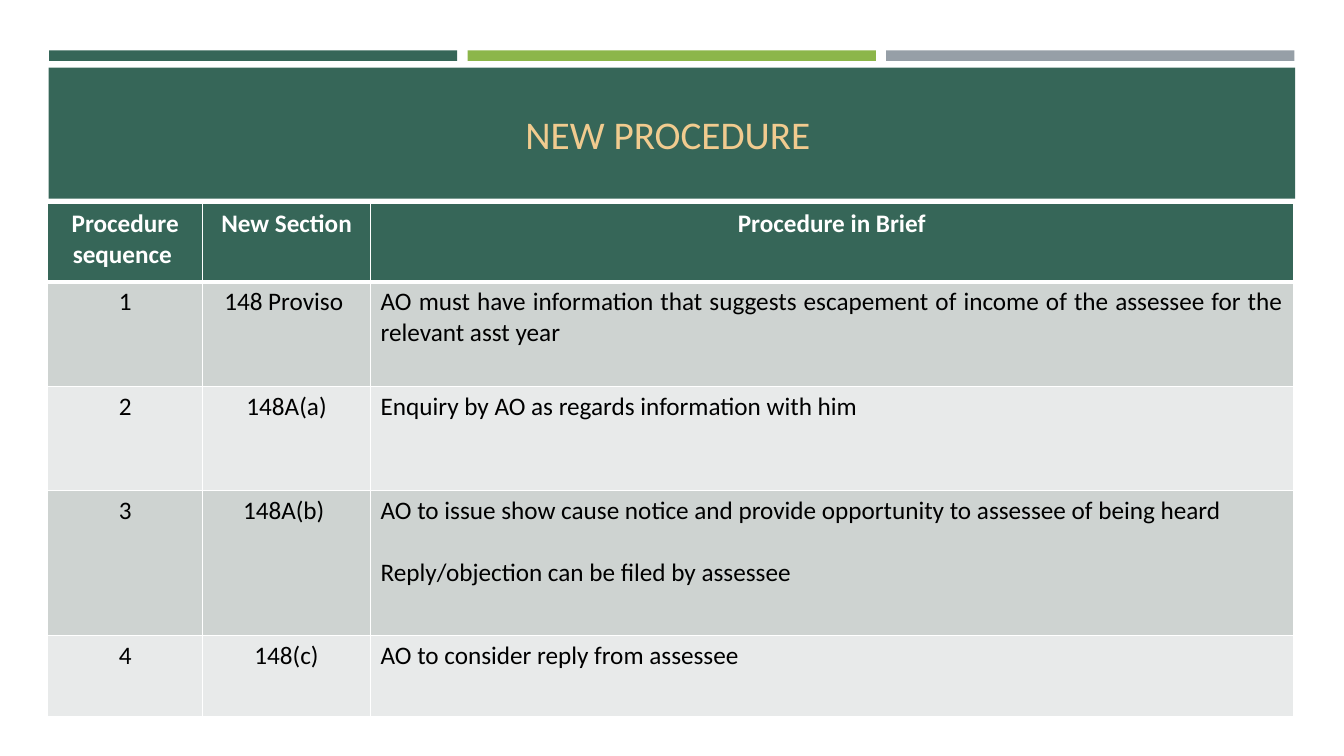
import pptx
import pptx.util
import pptx.dml.color
import pptx.enum.shapes
import pptx.enum.text
import pptx.oxml

Pt = pptx.util.Pt
RGBColor = pptx.dml.color.RGBColor
ALIGN = pptx.enum.text.PP_ALIGN

GREEN = RGBColor(0x36, 0x66, 0x58)
LIME = RGBColor(0x8C, 0xB6, 0x4A)
GREY = RGBColor(0x96, 0x9F, 0xA7)
GOLD = RGBColor(0xF1, 0xCB, 0x8F)
WHITE = RGBColor(0xFF, 0xFF, 0xFF)
BLACK = RGBColor(0x00, 0x00, 0x00)
ROW_DARK = RGBColor(0xCE, 0xD3, 0xD1)
ROW_LIGHT = RGBColor(0xE8, 0xEA, 0xEA)
FONT = "Calibri"


def add_bar(left, top, width, height, color):
    sp = s.shapes.add_shape(pptx.enum.shapes.MSO_SHAPE.RECTANGLE,
                            Pt(left), Pt(top), Pt(width), Pt(height))
    sp.shadow.inherit = False
    sp.fill.solid()
    sp.fill.fore_color.rgb = color
    sp.line.fill.background()


def set_borders(cell, bottom):
    tcPr = cell._tc.get_or_add_tcPr()
    widths = {"lnL": 1, "lnR": 1, "lnT": 1, "lnB": bottom}
    for i, (tag, width) in enumerate(widths.items()):
        tcPr.insert(i, pptx.oxml.parse_xml(
            f'<a:{tag} xmlns:a="http://schemas.openxmlformats.org/drawingml/2006/main" '
            f'w="{Pt(width)}"><a:solidFill><a:srgbClr val="{WHITE}"/></a:solidFill></a:{tag}>'))


prs = pptx.Presentation()
prs.slide_width, prs.slide_height = Pt(960), Pt(540)
s = prs.slides.add_slide(prs.slide_layouts[6])

for i, color in enumerate([GREEN, LIME, GREY]):
    add_bar(35 + i * 299, 36, 291.6, 7.5, color)
add_bar(34.7, 48.4, 890.5, 93.6, GREEN)

title = s.shapes.add_textbox(Pt(46), Pt(55.4), Pt(868.3), Pt(80))
tf = title.text_frame
tf.word_wrap = True
tf.vertical_anchor = pptx.enum.text.MSO_ANCHOR.MIDDLE
p = tf.paragraphs[0]
p.text = "NEW PROCEDURE "
p.alignment = ALIGN.CENTER
p.font.name, p.font.size, p.font.color.rgb = FONT, Pt(28), GOLD

rows = [
    ["Procedure sequence ", "New Section", "Procedure in Brief"],
    ["1", "148 Proviso ", "AO must have information that suggests escapement of income "
     "of the assessee for the relevant asst year"],
    ["2", "148A(a)", "Enquiry by AO as regards information with him"],
    ["3", "148A(b) ", "AO to issue show cause notice and provide opportunity to assessee "
     "of being heard\nReply/objection can be filed by assessee"],
    ["4", "148(c)", "AO to consider reply from assessee"],
]
col_widths = [110.5, 120, 659]
row_heights = [55.6, 74.7, 74.7, 103.5, 57.5]

table = s.shapes.add_table(len(rows), len(col_widths), Pt(34.2), Pt(145.6),
                           Pt(sum(col_widths)), Pt(sum(row_heights))).table
for col, width in zip(table.columns, col_widths):
    col.width = Pt(width)
for i, (texts, height) in enumerate(zip(rows, row_heights)):
    table.rows[i].height = Pt(height)
    header = i == 0
    for j, text in enumerate(texts):
        cell = table.cell(i, j)
        cell.text = text
        cell.fill.solid()
        cell.fill.fore_color.rgb = GREEN if header else ROW_DARK if i % 2 else ROW_LIGHT
        set_borders(cell, 3 if header else 1)
        for k, p in enumerate(cell.text_frame.paragraphs):
            p.alignment = ALIGN.CENTER if header or j < 2 else ALIGN.JUSTIFY if i == 1 else ALIGN.LEFT
            p.space_before = Pt(22 * k)
            p.font.name, p.font.size, p.font.bold = FONT, Pt(18), header
            p.font.color.rgb = WHITE if header else BLACK

prs.save("out.pptx")
